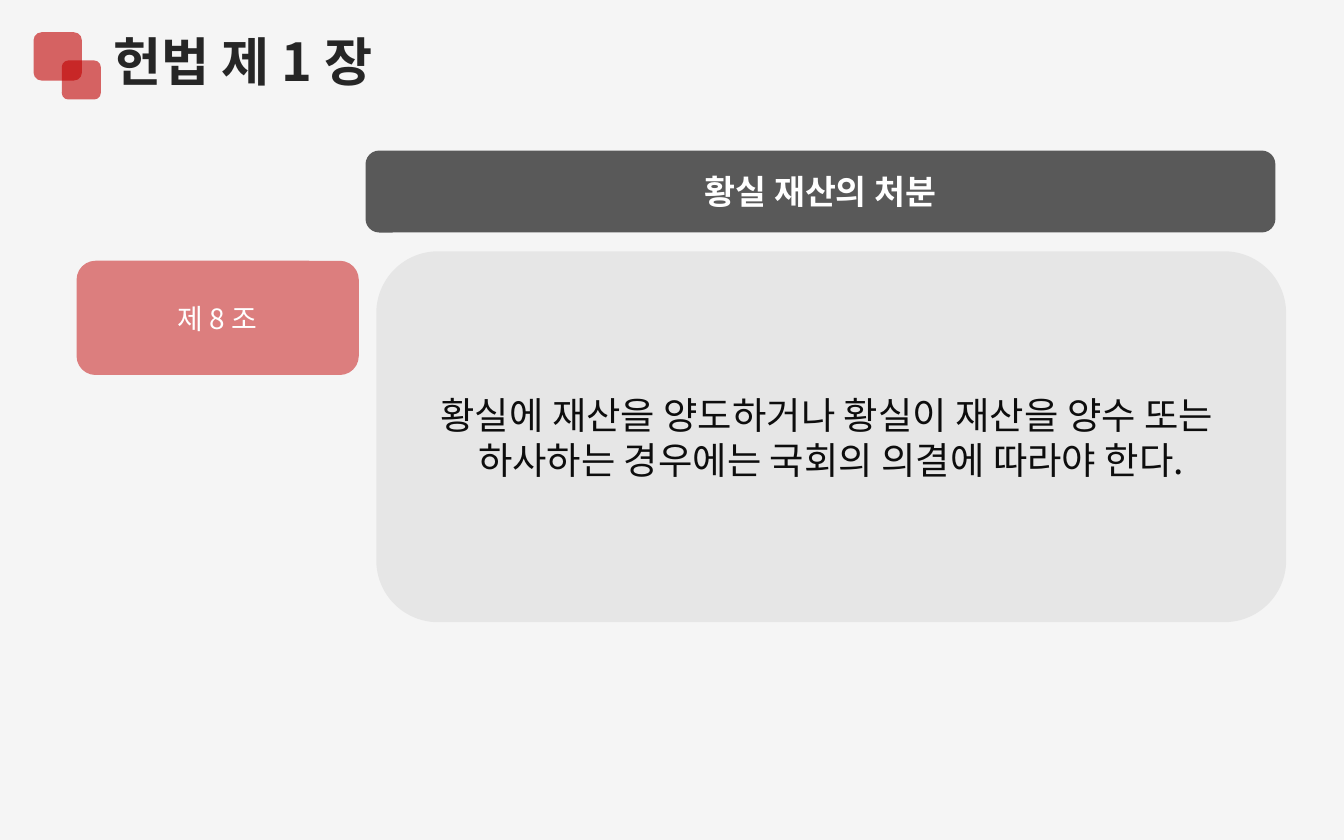
"""Build the slide on article 8 of chapter 1 of the constitution."""
import pptx
import pptx.dml.color
import pptx.enum.shapes
import pptx.enum.text
import pptx.oxml
import pptx.oxml.ns
import pptx.util
from pptx.util import Inches

FONT = "Noto Sans CJK KR"


def color(value):
    return pptx.dml.color.RGBColor.from_string(value)


def write(shape, lines, size, text_color, bold, alignment):
    frame = shape.text_frame
    frame.word_wrap = True
    for index, line in enumerate(lines):
        paragraph = frame.paragraphs[0] if index == 0 else frame.add_paragraph()
        paragraph.alignment = alignment
        run = paragraph.add_run()
        run.text = line
        run.font.size = pptx.util.Pt(size)
        run.font.bold = bold
        run.font.name = FONT
        run.font.color.rgb = color(text_color)
        east_asian = pptx.oxml.parse_xml(
            f'<a:ea {pptx.oxml.ns.nsdecls("a")} typeface="{FONT}"/>')
        run.font._element.find(pptx.oxml.ns.qn("a:latin")).addnext(east_asian)


presentation = pptx.Presentation()
presentation.slide_width = Inches(10)
presentation.slide_height = Inches(6.25)
slide = presentation.slides.add_slide(presentation.slide_layouts[6])
slide.background.fill.solid()
slide.background.fill.fore_color.rgb = color("F5F5F5")

title = slide.shapes.add_textbox(Inches(0.75), Inches(0.17), Inches(5.2), Inches(0.57))
write(title, ["헌법 제 1 장"], 28, "262626", True, pptx.enum.text.PP_ALIGN.LEFT)

body_lines = ["황실에 재산을 양도하거나 황실이 재산을 양수 또는 ",
              "하사하는 경우에는 국회의 의결에 따라야 한다."]
boxes = [
    (0.25, 0.24, 0.36, 0.36, "C00000", 60, [], 18, "FFFFFF", False),
    (0.46, 0.45, 0.29, 0.29, "C00000", 60, [], 18, "FFFFFF", False),
    (2.8, 1.87, 6.77, 2.76, "E6E6E6", 100, body_lines, 20, "0D0D0D", False),
    (2.72, 1.12, 6.77, 0.61, "595959", 100, ["황실 재산의 처분"], 18, "FFFFFF", True),
    (0.57, 1.94, 2.1, 0.85, "DC7E7E", 100, ["제 8 조"], 15, "FFFFFF", False),
]
for left, top, width, height, fill, opacity, lines, size, text_color, bold in boxes:
    shape = slide.shapes.add_shape(
        pptx.enum.shapes.MSO_SHAPE.ROUNDED_RECTANGLE,
        Inches(left), Inches(top), Inches(width), Inches(height))
    shape.shadow.inherit = False
    shape.line.fill.background()
    shape.fill.solid()
    shape.fill.fore_color.rgb = color(fill)
    if opacity < 100:
        fill_element = shape._element.spPr.find(pptx.oxml.ns.qn("a:solidFill"))
        fill_element[0].append(pptx.oxml.parse_xml(
            f'<a:alpha {pptx.oxml.ns.nsdecls("a")} val="{opacity * 1000}"/>'))
    shape.text_frame.vertical_anchor = pptx.enum.text.MSO_ANCHOR.MIDDLE
    write(shape, lines, size, text_color, bold, pptx.enum.text.PP_ALIGN.CENTER)

presentation.save("out.pptx")
